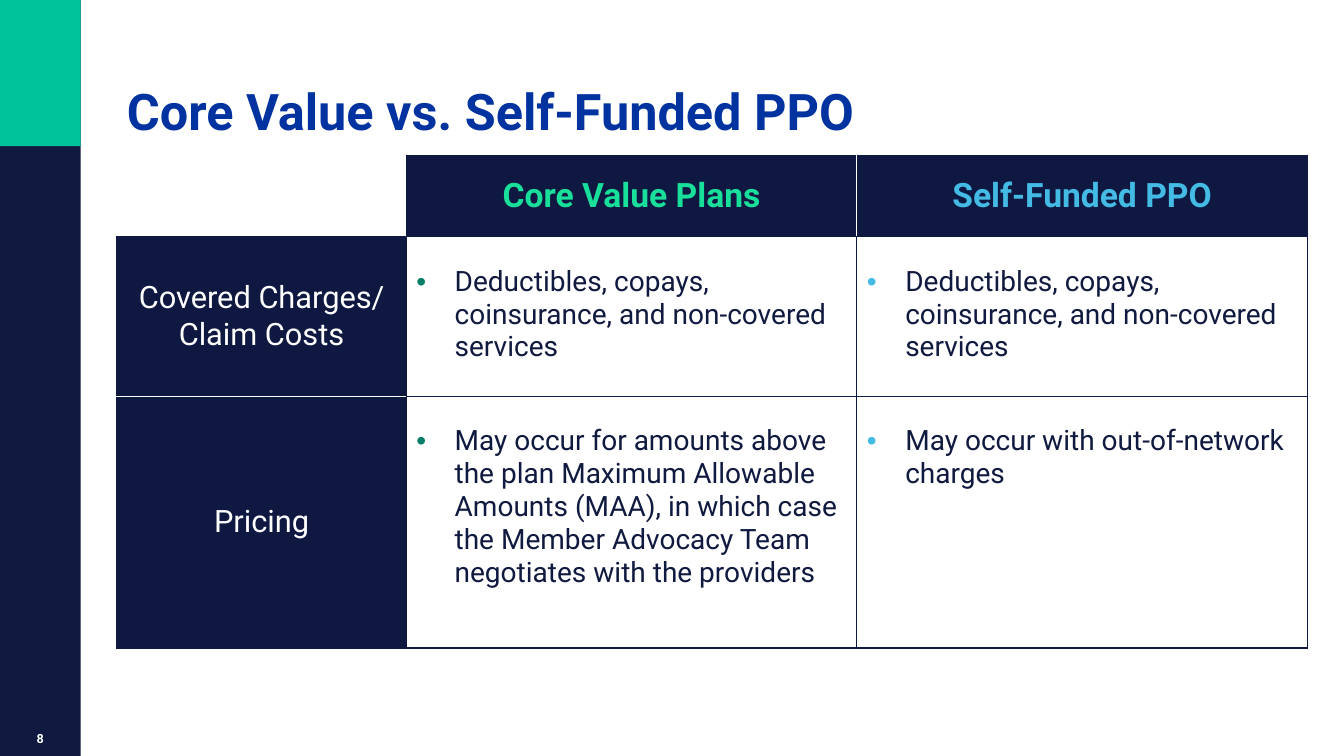
from lxml.etree import SubElement
from pptx import Presentation
from pptx.dml.color import RGBColor
from pptx.enum.shapes import MSO_SHAPE as Shape
from pptx.enum.text import MSO_ANCHOR as Anchor, PP_ALIGN as Align
from pptx.oxml.ns import qn
from pptx.util import Inches, Pt

COLORS = {
    "navy": "10193F", "table": "0E1841", "teal": "00C39C", "title": "0032A0",
    "white": "FFFFFF", "mint": "18E09A", "sky": "44BBE5", "green": "037E68",
}
FONT = "Roboto"
WIDTH, HEIGHT = Inches(13.33), Inches(7.5)
SIDEBAR, ACCENT, CONTENT_LEFT = 6, 19.33, 8.7
COLUMNS, ROWS = (21.53, 33.53, 33.53), (10.8, 21.07, 33.33)
TABLE_TOP = 20.53
PLANS = (("Core Value Plans", "mint", "green"), ("Self-Funded PPO", "sky", "sky"))
DEDUCTIBLES = "Deductibles, copays, coinsurance, and non-covered services"
TOPICS = (
    ("Covered Charges/\nClaim Costs", (DEDUCTIBLES, DEDUCTIBLES)),
    ("Pricing", (
        "May occur for amounts above the plan Maximum Allowable Amounts (MAA), "
        "in which case the Member Advocacy Team negotiates with the providers",
        "May occur with out-of-network charges",
    )),
)


def across(percent):
    return round(WIDTH * percent / 100)


def down(percent):
    return round(HEIGHT * percent / 100)


def area(left, top, width, height):
    """Turn percentages of the slide into a position and size."""
    return across(left), down(top), across(width), down(height)


def rgb(color):
    return RGBColor.from_string(COLORS[color])


def write(frame, text, size, color, bold=False, align=Align.LEFT):
    frame.text = text
    for paragraph in frame.paragraphs:
        paragraph.alignment = align
        for run in paragraph.runs:
            font = run.font
            font.name, font.size, font.bold = FONT, Pt(size), bold
            font.color.rgb = rgb(color)


def add_block(slide, color, height):
    block = slide.shapes.add_shape(Shape.RECTANGLE, *area(0, 0, SIDEBAR, height))
    block.shadow.inherit = False
    block.fill.solid()
    block.fill.fore_color.rgb = rgb(color)
    block.line.fill.background()


def add_text(slide, place, anchor, text, *style):
    frame = slide.shapes.add_textbox(*area(*place)).text_frame
    frame.word_wrap = True
    frame.vertical_anchor = anchor
    write(frame, text, *style)
    return frame


def set_borders(cell, **edges):
    """Draw the named edges (L, R, T, B) in 1 pt and hide the others."""
    properties = cell._tc.get_or_add_tcPr()
    for side in "LRTB":
        line = SubElement(properties, qn(f"a:ln{side}"), w=str(Pt(1)))
        if side in edges:
            fill = SubElement(line, qn("a:solidFill"))
            SubElement(fill, qn("a:srgbClr"), val=COLORS[edges[side]])
        else:
            SubElement(line, qn("a:noFill"))


def fill_heading(cell, text, size, color, bold, **edges):
    set_borders(cell, **edges)
    cell.fill.solid()
    cell.fill.fore_color.rgb = rgb("table")
    cell.vertical_anchor = Anchor.MIDDLE
    write(cell.text_frame, text, size, color, bold, Align.CENTER)


def fill_detail(cell, text, bullet_color):
    set_borders(cell, **dict.fromkeys("LRTB", "table"))
    cell.fill.background()
    cell.margin_top = Inches(0.28)
    write(cell.text_frame, text, 20, "navy")
    properties = cell.text_frame.paragraphs[0]._p.get_or_add_pPr()
    indent = Inches(0.38)
    properties.set("marL", str(indent))
    properties.set("indent", str(-indent))
    bullet = SubElement(properties, qn("a:buClr"))
    SubElement(bullet, qn("a:srgbClr"), val=COLORS[bullet_color])
    SubElement(properties, qn("a:buFont"), typeface="Arial")
    SubElement(properties, qn("a:buChar"), char="•")


def add_comparison(slide):
    place = area(CONTENT_LEFT, TABLE_TOP, sum(COLUMNS), sum(ROWS))
    table = slide.shapes.add_table(len(ROWS), len(COLUMNS), *place).table
    table.first_row = table.horz_banding = False
    for column, share in zip(table.columns, COLUMNS):
        column.width = across(share)
    for row, share in zip(table.rows, ROWS):
        row.height = down(share)

    corner = table.cell(0, 0)
    set_borders(corner)
    corner.fill.background()
    divider_sides = ("R", "L")
    for column, (plan, color, _) in enumerate(PLANS, 1):
        edges = dict.fromkeys("LRTB", "table")
        edges[divider_sides[column - 1]] = "white"
        fill_heading(table.cell(0, column), plan, 24, color, True, **edges)

    for row, (topic, details) in enumerate(TOPICS, 1):
        top, bottom = ("table", "white") if row == 1 else ("white", "table")
        fill_heading(table.cell(row, 0), topic, 22, "white", False,
                     L="table", R="table", T=top, B=bottom)
        for column, (detail, plan) in enumerate(zip(details, PLANS), 1):
            fill_detail(table.cell(row, column), detail, plan[2])


def main():
    deck = Presentation()
    deck.slide_width, deck.slide_height = WIDTH, HEIGHT
    slide = deck.slides.add_slide(deck.slide_layouts[6])
    add_block(slide, "navy", 100)
    add_block(slide, "teal", ACCENT)
    add_comparison(slide)
    title = add_text(slide, (CONTENT_LEFT, 0, 86.5, ACCENT), Anchor.BOTTOM,
                     "Core Value vs. Self-Funded PPO", 36, "title", True)
    title.paragraphs[0].line_spacing = 0.9
    add_text(slide, (0, 95.47, SIDEBAR, 4.53), Anchor.MIDDLE,
             "8", 9, "white", True, Align.CENTER)
    deck.save("out.pptx")


if __name__ == "__main__":
    main()
